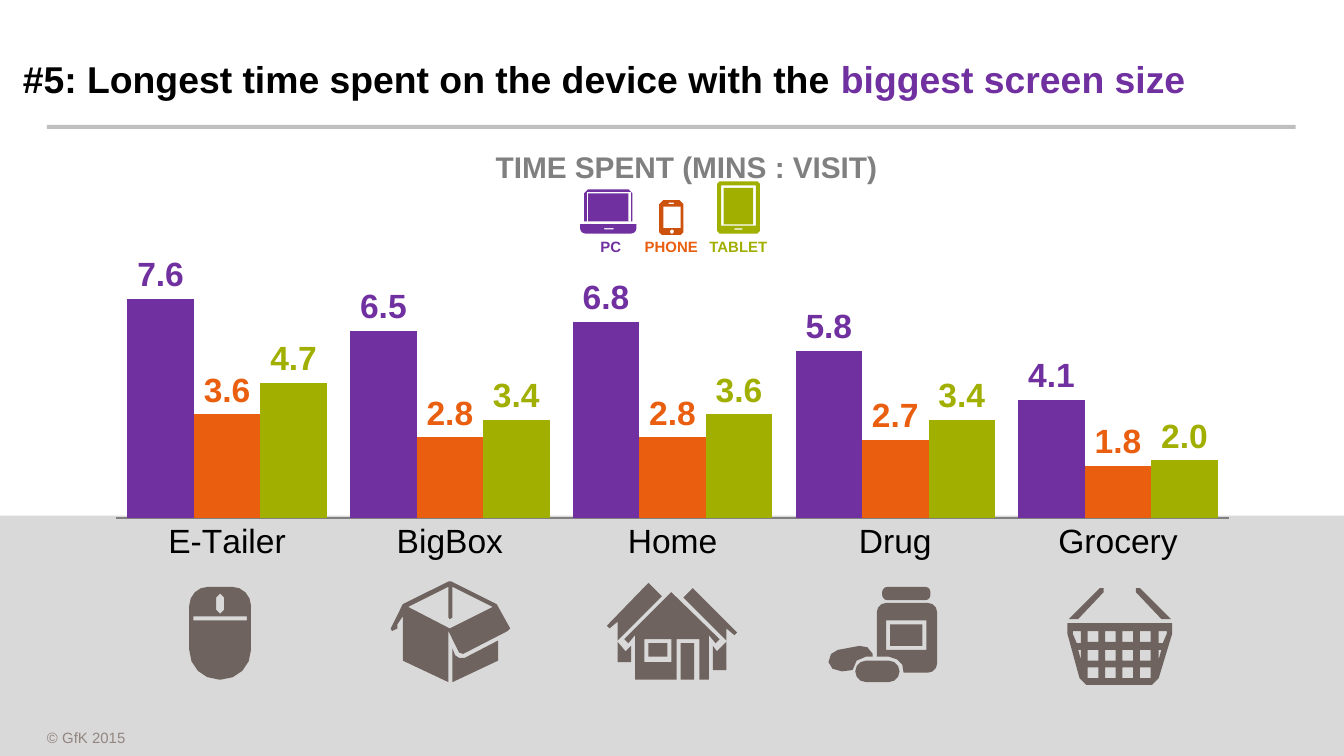
import math
from dataclasses import dataclass

import pptx
import pptx.chart.data
import pptx.dml.color
import pptx.enum.chart
import pptx.enum.shapes
import pptx.enum.text
import pptx.util
from lxml import etree
from pptx.util import Inches


@dataclass(frozen=True)
class Theme:
    font: str = "Arial"
    black: str = "000000"
    pc: str = "7030A0"
    phone: str = "E95E0F"
    phone_icon: str = "CD520D"
    tablet: str = "A1AF00"
    band: str = "D9D9D9"
    rule: str = "BFBFBF"
    heading: str = "808080"
    store_icon: str = "6F635F"
    footer: str = "928580"
    title_size: int = 20
    chart_size: int = 18
    heading_size: int = 16
    small_size: int = 8


THEME = Theme()
ALIGN = pptx.enum.text.PP_ALIGN
ANCHOR = pptx.enum.text.MSO_ANCHOR
STORES = ["E-Tailer", "BigBox", "Home", "Drug", "Grocery"]
MINUTES = [
    ("PC", THEME.pc, (7.6, 6.5, 6.8, 5.8, 4.1)),
    ("PHONE", THEME.phone, (3.6, 2.8, 2.8, 2.7, 1.8)),
    ("TABLET", THEME.tablet, (4.7, 3.4, 3.6, 3.4, 2.0)),
]


def rgb(color):
    return pptx.dml.color.RGBColor.from_string(color)


def paint(shape, color):
    shape.shadow.inherit = False
    shape.fill.solid()
    shape.fill.fore_color.rgb = rgb(color)
    shape.line.fill.background()


def add_bar(slide, left, top, width, height, color):
    rectangle = pptx.enum.shapes.MSO_SHAPE.RECTANGLE
    paint(slide.shapes.add_shape(rectangle, Inches(left), Inches(top),
                                 Inches(width), Inches(height)), color)


def add_text(slide, place, runs, size, bold=True, align=ALIGN.LEFT,
             anchor=ANCHOR.TOP, wrap=True):
    frame = slide.shapes.add_textbox(*map(Inches, place)).text_frame
    frame.margin_left = frame.margin_right = 0
    frame.margin_top = frame.margin_bottom = 0
    frame.word_wrap = wrap
    frame.vertical_anchor = anchor
    line = frame.paragraphs[0]
    line.alignment = align
    line.font.name = THEME.font
    line.font.size = pptx.util.Pt(size)
    line.font.bold = bold
    for words, color in runs:
        run = line.add_run()
        run.text = words
        run.font.color.rgb = rgb(color)


def arc(x, y, radius, start):
    if not radius:
        return [(x, y)]
    steps = 4 if radius > 0.1 else 3 if radius > 0.03 else 1
    angles = [math.radians(start + step * 90 / steps) for step in range(steps + 1)]
    return [(x + radius * math.cos(a), y + radius * math.sin(a)) for a in angles]


def box(left, top, right, bottom, upper=0, lower=0):
    return (arc(left + upper, top + upper, upper, 180)
            + arc(right - upper, top + upper, upper, 270)
            + arc(right - lower, bottom - lower, lower, 0)
            + arc(left + lower, bottom - lower, lower, 90))


def mirror(outline, axis):
    return [(2 * axis - x, y) for x, y in outline]


def add_icon(slide, outlines, color):
    outlines = [[(Inches(x), Inches(y)) for x, y in outline] for outline in outlines]
    builder = slide.shapes.build_freeform(*outlines[0][0])
    for index, outline in enumerate(outlines):
        if index:
            builder.move_to(*outline[0])
        builder.add_line_segments(outline[1:], close=True)
    paint(builder.convert_to_shape(), color)


def mouse():
    return [box(1.41, 4.37, 1.87, 5.06, 0.14, 0.22),
            box(1.61, 4.42, 1.67, 4.57, 0.03, 0.03),
            box(1.44, 4.59, 1.84, 4.62)]


def carton():
    return [
        [(3, 4.5), (3.34, 4.33), (3.36, 4.33), (3.7, 4.5), (3.8, 4.68),
         (3.78, 4.7), (3.45, 4.87), (3.42, 4.86), (3.34, 4.7), (3.34, 5.08),
         (3, 4.92), (3, 4.59), (2.96, 4.65), (2.96, 4.68), (2.92, 4.7),
         (2.91, 4.68)],
        [(3.04, 4.52), (3.35, 4.68), (3.67, 4.52), (3.37, 4.37), (3.37, 4.6),
         (3.35, 4.61), (3.34, 4.6), (3.34, 4.37)],
        [(3.71, 4.77), (3.71, 4.92), (3.37, 5.08), (3.37, 4.83), (3.39, 4.88),
         (3.42, 4.9), (3.46, 4.9)],
    ]


def house():
    return [
        [(4.65, 4.76), (5, 4.41), (5.36, 4.76), (5.33, 4.79), (5.28, 4.73),
         (5.28, 5.06), (5.21, 5.06), (5.21, 4.76), (5.04, 4.76), (5.04, 5.06),
         (4.73, 5.06), (4.73, 4.73), (4.68, 4.79)],
        box(4.8, 4.76, 5, 4.93), box(4.83, 4.79, 4.97, 4.89),
        box(5.07, 4.79, 5.17, 5.06),
        [(5.41, 4.78), (5.34, 4.85), (5.31, 4.81), (5.31, 4.99), (5.41, 4.99)],
        [(5.41, 4.77), (5.41, 4.68), (5.47, 4.73), (5.49, 4.71), (5.16, 4.38),
         (5.09, 4.45)],
        [(4.7, 4.93), (4.6, 4.93), (4.6, 4.78), (4.66, 4.85), (4.7, 4.81)],
        [(4.6, 4.77), (4.6, 4.63), (4.54, 4.68), (4.52, 4.66), (4.83, 4.34),
         (4.93, 4.44)],
    ]


def medicine():
    bottle = (arc(6.6, 4.56, 0.07, 180) + arc(6.91, 4.56, 0.07, 270)
              + arc(6.91, 4.94, 0.07, 0)
              + [(6.73, 5.01), (6.72, 4.95), (6.68, 4.91), (6.62, 4.89), (6.53, 4.89)])
    rear_pill = [(6.24, 4.84), (6.4, 4.81), (6.46, 4.82), (6.5, 4.87), (6.5, 4.89),
                 (6.45, 4.89), (6.38, 4.92), (6.35, 4.99), (6.27, 5), (6.2, 4.98),
                 (6.17, 4.93), (6.19, 4.87)]
    return [bottle, box(6.6, 4.62, 6.9, 4.84), box(6.63, 4.65, 6.87, 4.81),
            box(6.57, 4.37, 6.93, 4.47, 0.04, 0.04), rear_pill,
            box(6.37, 4.92, 6.7, 5.08, 0.08, 0.08)]


def basket():
    middle = 8.34
    handle = [(7.96, 4.61), (8.19, 4.38), (8.22, 4.38), (8.22, 4.41), (8.03, 4.61)]
    upper_gap = [(7.99, 4.7), (7.99, 4.72), (8.02, 4.79), (8.05, 4.79), (8.05, 4.7)]
    side_gap = [(8.03, 4.84), (8.05, 4.91), (8.05, 4.84)]
    halves = [handle, upper_gap, side_gap]
    body = [(7.95, 4.64), (8.73, 4.64), (8.73, 4.72), (8.63, 5.05), (8.58, 5.1),
            (8.09, 5.1), (8.04, 5.05), (7.95, 4.72)]
    holes = [box(8.1 + 0.13 * column, top, 8.18 + 0.13 * column, top + 0.08)
             for top in (4.7, 4.84, 4.97) for column in range(4)]
    return [body] + halves + [mirror(half, middle) for half in halves] + holes


def laptop():
    return [box(4.32, 1.67, 4.74, 1.74, 0, 0.04), box(4.5, 1.7, 4.57, 1.71),
            box(4.35, 1.41, 4.71, 1.65, 0.03), box(4.37, 1.43, 4.7, 1.65),
            box(4.38, 1.44, 4.68, 1.65)]


def phone():
    return [box(4.91, 1.49, 5.09, 1.75, 0.03, 0.02), box(4.94, 1.54, 5.07, 1.7),
            box(4.98, 1.51, 5.02, 1.52), box(4.99, 1.71, 5.02, 1.74, 0.01, 0.01)]


def tablet():
    return [box(5.34, 1.35, 5.66, 1.74, 0.02, 0.02), box(5.37, 1.38, 5.63, 1.68),
            box(5.39, 1.4, 5.61, 1.67), box(5.47, 1.7, 5.53, 1.71)]


def place_plot(chart, **fractions):
    area = chart.plots[0]._element.getparent()
    namespace = etree.QName(area).namespace
    for old in area.findall(f"{{{namespace}}}layout"):
        area.remove(old)
    layout = etree.Element(f"{{{namespace}}}layout")
    manual = etree.SubElement(layout, f"{{{namespace}}}manualLayout")
    settings = {"layoutTarget": "inner", "xMode": "edge", "yMode": "edge", **fractions}
    for name, value in settings.items():
        etree.SubElement(manual, f"{{{namespace}}}{name}").set("val", str(value))
    area.insert(0, layout)


def add_minutes_chart(slide):
    data = pptx.chart.data.CategoryChartData(number_format="0.0")
    data.categories = STORES
    for device, _, values in MINUTES:
        data.add_series(device, values)
    kinds = pptx.enum.chart
    chart = slide.shapes.add_chart(kinds.XL_CHART_TYPE.COLUMN_CLUSTERED, Inches(0.69),
                                   Inches(1.36), Inches(8.64), Inches(3.01), data).chart
    chart.has_legend = False
    chart.has_title = False
    chart.font.name = THEME.font
    chart.font.size = pptx.util.Pt(THEME.chart_size)
    chart.font.color.rgb = rgb(THEME.black)
    place_plot(chart, x=0.02, y=0.26, w=0.96, h=0.57)
    stores, minutes = chart.category_axis, chart.value_axis
    stores.major_tick_mark = kinds.XL_TICK_MARK.NONE
    stores.format.line.color.rgb = rgb(THEME.heading)
    minutes.minimum_scale, minutes.maximum_scale = 0, 8
    minutes.has_major_gridlines = False
    minutes.visible = False
    columns = chart.plots[0]
    columns.gap_width, columns.overlap = 35, 0
    columns.vary_by_categories = False
    for series, (_, color, _) in zip(columns.series, MINUTES):
        series.format.fill.solid()
        series.format.fill.fore_color.rgb = rgb(color)
        labels = series.data_labels
        labels.show_value = True
        labels.number_format, labels.number_format_is_linked = "0.0", False
        labels.position = kinds.XL_LABEL_POSITION.OUTSIDE_END
        labels.font.name = THEME.font
        labels.font.size = pptx.util.Pt(THEME.chart_size)
        labels.font.bold = True
        labels.font.color.rgb = rgb(color)


def main():
    deck = pptx.Presentation()
    deck.slide_width, deck.slide_height = Inches(10.01), Inches(5.63)
    slide = deck.slides.add_slide(deck.slide_layouts[6])
    add_bar(slide, 0, 3.84, 10.01, 1.79, THEME.band)
    add_text(slide, (0.17, 0.12, 8.87, 0.63),
             [("#5: Longest time spent on the device with the ", THEME.black),
              ("biggest screen size", THEME.pc)], THEME.title_size, anchor=ANCHOR.BOTTOM)
    add_bar(slide, 0.35, 0.93, 9.3, 0.03, THEME.rule)
    add_minutes_chart(slide)
    add_text(slide, (0.58, 1.11, 9.07, 0.27), [("TIME SPENT (MINS : VISIT)", THEME.heading)],
             THEME.heading_size, align=ALIGN.CENTER, wrap=False)
    for store_icon in (mouse, carton, house, medicine, basket):
        add_icon(slide, store_icon(), THEME.store_icon)
    add_text(slide, (0.35, 5.41, 7.72, 0.16), [("© GfK 2015", THEME.footer)],
             THEME.small_size, bold=False, anchor=ANCHOR.MIDDLE)
    devices = [(laptop, THEME.pc, 4.22), (phone, THEME.phone_icon, 4.67),
               (tablet, THEME.tablet, 5.17)]
    for (icon, icon_color, left), (device, color, _) in zip(devices, MINUTES):
        add_icon(slide, icon(), icon_color)
        add_text(slide, (left, 1.77, 0.66, 0.14), [(device, color)], THEME.small_size,
                 align=ALIGN.CENTER, wrap=False)
    deck.save("out.pptx")


if __name__ == "__main__":
    main()
